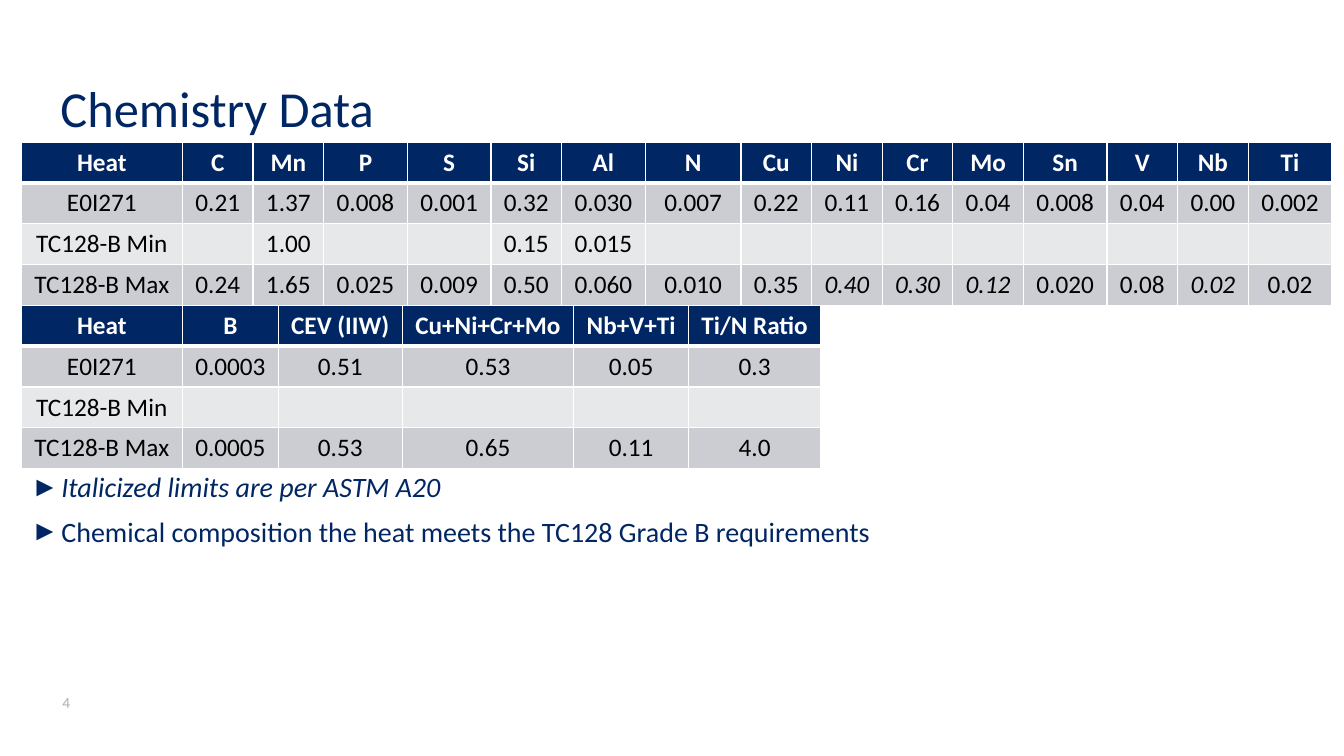
from lxml import etree
from pptx import Presentation
from pptx.dml.color import RGBColor
from pptx.enum.text import MSO_ANCHOR, MSO_AUTO_SIZE, PP_ALIGN
from pptx.oxml.ns import qn
from pptx.util import Inches, Pt

LEFT, CENTER = PP_ALIGN.LEFT, PP_ALIGN.CENTER
BOTTOM, MIDDLE = MSO_ANCHOR.BOTTOM, MSO_ANCHOR.MIDDLE
NO_FIT = MSO_AUTO_SIZE.NONE
COLORS = {"navy": "002664", "white": "FFFFFF", "black": "000000",
          "gray": "B0B1AB", "dark": "CCCDD3", "light": "E7E8EA"}
ROW = 0.405
EDGE = 0.21


def write(para, text, size=18, color="black", bold=False, italic=False,
          align=LEFT, line=None):
    para.alignment = align
    if line:
        para.line_spacing = line
    run = para.add_run()
    run.text = text
    font = run.font
    font.name, font.size = "Calibri", Pt(size)
    font.bold, font.italic = bold, italic
    font.color.rgb = RGBColor.from_string(COLORS[color])


def border(cell, side, width):
    props = cell._tc.get_or_add_tcPr()
    edge = etree.SubElement(props, qn("a:ln" + side), w=str(Pt(width)))
    fill = etree.SubElement(edge, qn("a:solidFill"))
    etree.SubElement(fill, qn("a:srgbClr"), val=COLORS["white"])


prs = Presentation()
prs.slide_width, prs.slide_height = Inches(13.33), Inches(7.5)
slide = prs.slides.add_slide(prs.slide_layouts[5])

# Title
title = slide.shapes.title
title.left, title.top = Inches(0.5), Inches(0.35)
title.width, title.height = Inches(12.16), Inches(1.06)
frame = title.text_frame
frame.auto_size, frame.vertical_anchor = NO_FIT, BOTTOM
write(frame.paragraphs[0], "Chemistry Data", size=36, color="navy", line=0.8)

# Bullets
notes = [("Italicized limits are per ASTM A20", True),
         ("Chemical composition the heat meets the TC128 Grade B requirements", False)]
body = slide.shapes.add_textbox(Inches(EDGE), Inches(4.65), Inches(12.92), Inches(0.9))
frame = body.text_frame
frame.word_wrap = True
for i, (text, slant) in enumerate(notes):
    para = frame.add_paragraph() if i else frame.paragraphs[0]
    props = para._p.get_or_add_pPr()
    props.set("marL", str(Inches(0.3)))
    props.set("indent", str(-Inches(0.3)))
    tint = etree.SubElement(props, qn("a:buClr"))
    etree.SubElement(tint, qn("a:srgbClr"), val=COLORS["navy"])
    etree.SubElement(props, qn("a:buFont"), typeface="Arial")
    etree.SubElement(props, qn("a:buChar"), char="►")
    para.space_before = Pt(10 if i else 0)
    write(para, text, size=20, color="navy", italic=slant, line=0.9)

# Slide number
number = slide.shapes.add_textbox(Inches(0.52), Inches(6.82), Inches(0.6), Inches(0.3))
frame = number.text_frame
frame.word_wrap, frame.vertical_anchor = True, MIDDLE
write(frame.paragraphs[0], "4", size=11, color="gray")

# Tables: top, column widths, rows, names of the columns with italic limits
heats = [
    (1.41,
     [1.6, 0.7, 0.7, 0.83, 0.83, 0.7, 0.83, 0.95,
      0.7, 0.7, 0.7, 0.7, 0.83, 0.7, 0.7, 0.83],
     [["Heat", "C", "Mn", "P", "S", "Si", "Al", "N",
       "Cu", "Ni", "Cr", "Mo", "Sn", "V", "Nb", "Ti"],
      ["E0I271", "0.21", "1.37", "0.008", "0.001", "0.32", "0.030", "0.007",
       "0.22", "0.11", "0.16", "0.04", "0.008", "0.04", "0.00", "0.002"],
      ["TC128-B Min", "", "1.00", "", "", "0.15", "0.015", "",
       "", "", "", "", "", "", "", ""],
      ["TC128-B Max", "0.24", "1.65", "0.025", "0.009", "0.50", "0.060", "0.010",
       "0.35", "0.40", "0.30", "0.12", "0.020", "0.08", "0.02", "0.02"]],
     {"Ni", "Cr", "Mo", "Nb"}),
    (3.03,
     [1.6, 0.95, 1.23, 1.7, 1.14, 1.31],
     [["Heat", "B", "CEV (IIW)", "Cu+Ni+Cr+Mo", "Nb+V+Ti", "Ti/N Ratio"],
      ["E0I271", "0.0003", "0.51", "0.53", "0.05", "0.3"],
      ["TC128-B Min", "", "", "", "", ""],
      ["TC128-B Max", "0.0005", "0.53", "0.65", "0.11", "4.0"]],
     set()),
]
fills = ["navy", "dark", "light", "dark"]

for top, widths, rows, slanted in heats:
    table = slide.shapes.add_table(
        len(rows), len(widths), Inches(EDGE), Inches(top),
        Inches(sum(widths)), Inches(ROW * len(rows))).table
    for col, width in zip(table.columns, widths):
        col.width = Inches(width)
    for r, values in enumerate(rows):
        table.rows[r].height = Inches(ROW)
        for c, value in enumerate(values):
            cell = table.cell(r, c)
            for side in "LRTB":
                thick = (r, side) in [(0, "B"), (1, "T")]
                border(cell, side, 3 if thick else 1)
            cell.fill.solid()
            cell.fill.fore_color.rgb = RGBColor.from_string(COLORS[fills[r]])
            if value:
                write(cell.text_frame.paragraphs[0], value, align=CENTER,
                      color="black" if r else "white", bold=r == 0,
                      italic=r == 3 and rows[0][c] in slanted)

prs.save("out.pptx")
